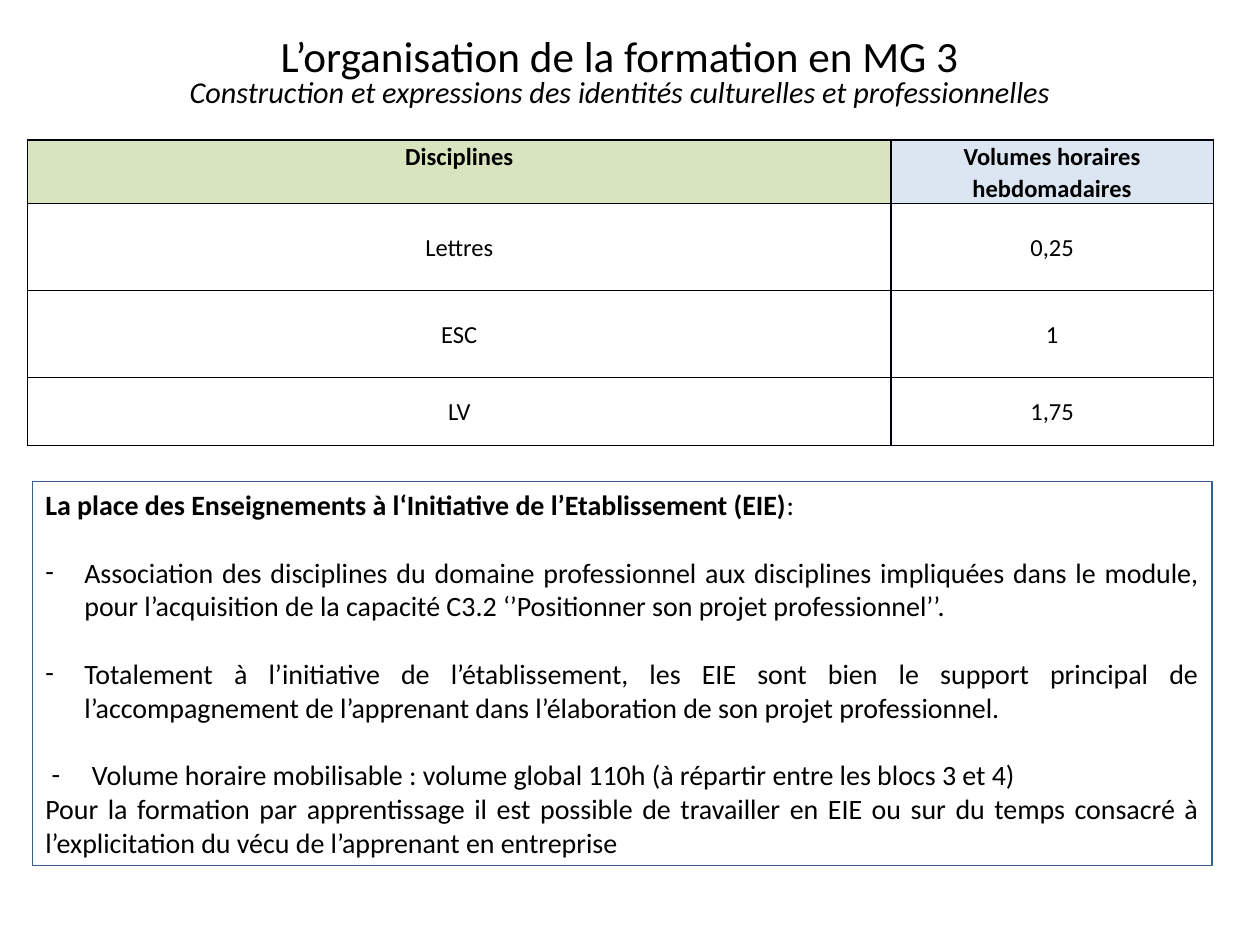
from dataclasses import dataclass

from pptx import Presentation, util as u
from pptx.dml.color import RGBColor
from pptx.enum import text
from pptx.oxml import ns, xmlchemy as xml

In = u.Inches


@dataclass(frozen=True)
class Theme:
    font: str = "Calibri"
    ink: str = "000000"
    edge: str = "00000A"
    frame: str = "376092"
    green: str = "D7E4BD"
    blue: str = "DCE6F2"
    title: float = 24.7
    sub: float = 17.3
    cell: float = 14
    body: float = 16
    gap: float = 19.5


T = Theme()
ALIGN = text.PP_ALIGN

ROWS = [
    ("Disciplines", "Volumes horaires hebdomadaires"),
    ("Lettres", "0,25"),
    ("ESC", "1"),
    ("LV", "1,75"),
]
# Each paragraph: runs as (words, bold), space before, left margin, hanging dash
NOTES = [
    ([("La place des Enseignements à l‘Initiative de l’Etablissement (EIE)", True),
      (":", False)], 0, 0, 0),
    ([("Association des disciplines du domaine professionnel aux disciplines "
       "impliquées dans le module, pour l’acquisition de la capacité C3.2 "
       "‘’Positionner son projet professionnel’’.", False)], T.gap, 0.31, 0.31),
    ([("Totalement à l’initiative de l’établissement, les EIE sont bien le "
       "support principal de l’accompagnement de l’apprenant dans "
       "l’élaboration de son projet professionnel.", False)], T.gap, 0.31, 0.31),
    ([("Volume horaire mobilisable : volume global 110h (à répartir entre "
       "les blocs 3 et 4)", False)], T.gap, 0.37, 0.32),
    ([("Pour la formation par apprentissage il est possible de travailler en "
       "EIE ou sur du temps consacré à l’explicitation du vécu de l’apprenant "
       "en entreprise", False)], 0, 0, 0),
]


def color(code):
    return RGBColor.from_string(code)


def node(root, tag, **attrs):
    item = xml.OxmlElement(tag)
    for key, val in attrs.items():
        item.set(key, str(val))
    root.append(item)
    return item


def place(shape, box):
    shape.left, shape.top, shape.width, shape.height = map(In, box)


def add_run(para, words, size, bold=False, slant=False):
    run = para.add_run()
    run.text = words
    font = run.font
    font.name, font.size = T.font, u.Pt(size)
    font.bold, font.italic = bold, slant
    font.color.rgb = color(T.ink)


def add_title(slide, box):
    title = slide.shapes.title
    place(title, box)
    frame = title.text_frame
    frame.auto_size = text.MSO_AUTO_SIZE.NONE
    frame.vertical_anchor = text.MSO_ANCHOR.MIDDLE
    para = frame.paragraphs[0]
    para.alignment, para.line_spacing = ALIGN.CENTER, 0.8
    add_run(para, "L’organisation de la formation en MG 3", T.title)
    para.add_line_break()
    add_run(para, "Construction et expressions des identités culturelles et "
            "professionnelles", T.sub, slant=True)


def edge_cell(cell):
    props = cell._tc.get_or_add_tcPr()
    for side in "LRTB":
        line = node(props, f"a:ln{side}", w=u.Pt(1))
        node(node(line, "a:solidFill"), "a:srgbClr", val=T.edge)


def add_hours(slide, box):
    table = slide.shapes.add_table(len(ROWS), 2, *map(In, box)).table
    table.first_row = table.horz_banding = False
    for col, width in zip(table.columns, (6.85, 2.56)):
        col.width = In(width)
    for row, height in zip(table.rows, (0.49, 0.69, 0.69, 0.54)):
        row.height = In(height)
    for r, row in enumerate(ROWS):
        for c, words in enumerate(row):
            cell = table.cell(r, c)
            head = r == 0
            edge_cell(cell)
            if head:
                cell.fill.solid()
                cell.fill.fore_color.rgb = color((T.green, T.blue)[c])
            else:
                cell.fill.background()
                cell.vertical_anchor = text.MSO_ANCHOR.MIDDLE
            cell.margin_left = cell.margin_right = In(0.07)
            cell.margin_top = cell.margin_bottom = 0
            para = cell.text_frame.paragraphs[0]
            para.alignment, para.line_spacing = ALIGN.CENTER, 1.07
            para.space_after = u.Pt(8)
            add_run(para, words, T.cell, bold=head)


def set_dash(para, left, hang):
    props = para._p.get_or_add_pPr()
    props.set("marL", str(In(left)))
    props.set("indent", str(-In(hang)))
    if hang:
        node(node(props, "a:buClr"), "a:srgbClr", val=T.ink)
        node(props, "a:buFont", typeface=T.font)
        node(props, "a:buChar", char="-")
    else:
        node(props, "a:buNone")


def add_notes(slide, box):
    body = slide.placeholders[1]
    place(body, box)
    body.line.color.rgb = color(T.frame)
    body.line.width = u.Pt(0.75)
    frame = body.text_frame
    frame.auto_size = text.MSO_AUTO_SIZE.NONE
    frame.vertical_anchor = text.MSO_ANCHOR.TOP
    for i, (runs, before, left, hang) in enumerate(NOTES):
        para = frame.add_paragraph() if i else frame.paragraphs[0]
        para.alignment = ALIGN.JUSTIFY
        para.space_before = u.Pt(before)
        set_dash(para, left, hang)
        for words, bold in runs:
            add_run(para, words, T.body, bold)


def main():
    deck = Presentation()
    deck.slide_width, deck.slide_height = In(10), In(7.5)
    slide = deck.slides.add_slide(deck.slide_layouts[1])
    # Heading, weekly hours, then the framed notes
    add_title(slide, (0.22, 0.23, 9.4, 0.72))
    add_hours(slide, (0.22, 1.11, 9.41, 2.41))
    add_notes(slide, (0.26, 3.82, 9.36, 3.05))
    deck.save("out.pptx")


if __name__ == "__main__":
    main()
